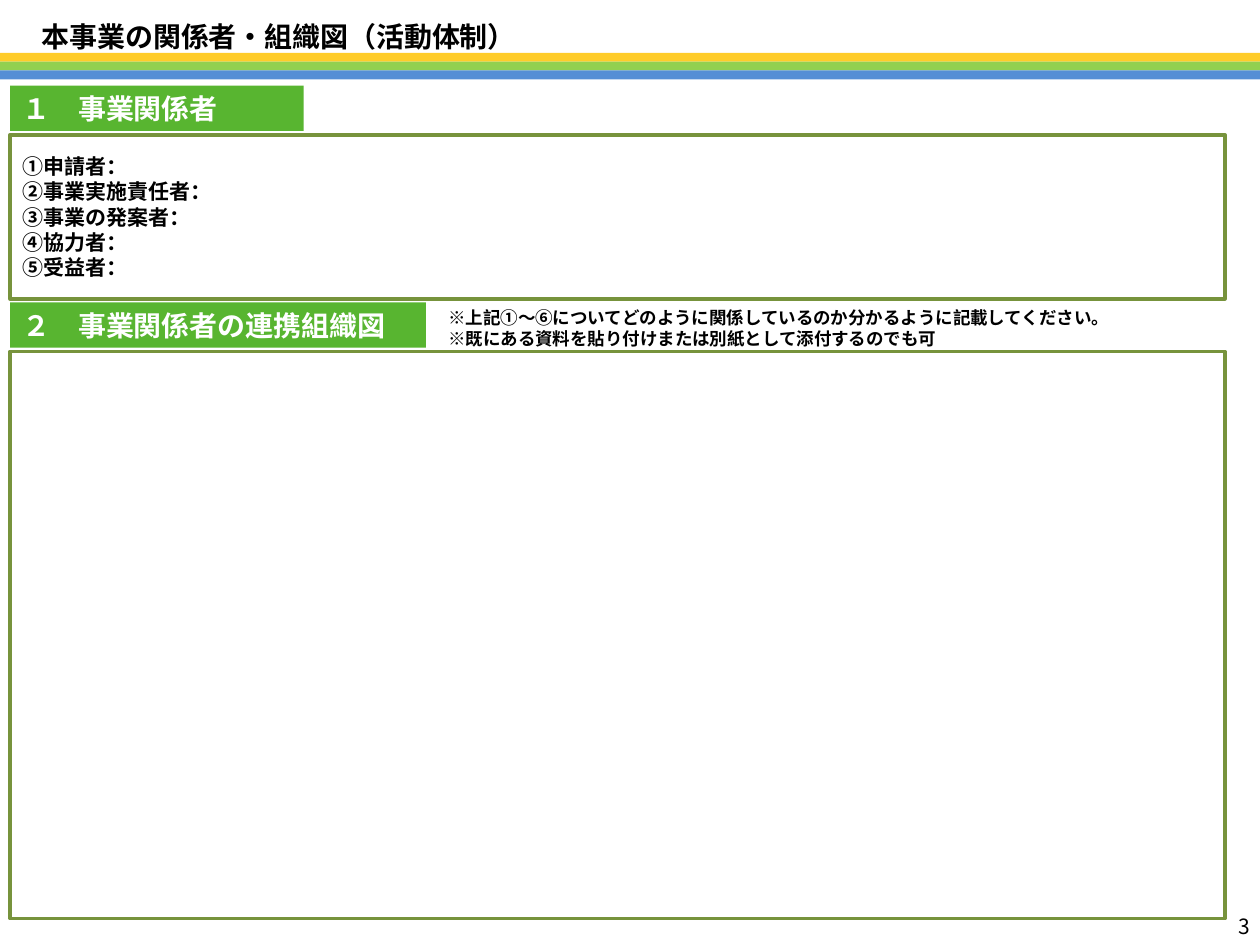
from dataclasses import dataclass

from lxml.etree import SubElement
from pptx import Presentation
from pptx.dml.color import RGBColor
from pptx.enum.shapes import MSO_SHAPE
from pptx.enum.text import MSO_ANCHOR, MSO_AUTO_SIZE, PP_ALIGN
from pptx.oxml.ns import qn
from pptx.util import Inches, Pt

FONT = "Noto Sans CJK JP"
BLACK = RGBColor(0x00, 0x00, 0x00)
WHITE = RGBColor(0xFF, 0xFF, 0xFF)
YELLOW = RGBColor(0xFF, 0xCC, 0x29)
LIME = RGBColor(0x92, 0xD0, 0x50)
BLUE = RGBColor(0x55, 0x8E, 0xD5)
GREEN = RGBColor(0x58, 0xB5, 0x30)
OLIVE = RGBColor(0x77, 0x93, 0x3C)

SLIDE_W, SLIDE_H = 10, 7.5
LEFT, FRAME_W = 0.08, 9.64
HEAD_H, HEAD_STEP = 0.36, 0.39  # heading height, heading top to frame top
STRIPE_TOP, STRIPE_H = 0.42, 0.07


@dataclass(frozen=True)
class Section:
    heading: str
    top: float
    head_w: float
    frame_h: float
    items: tuple[str, ...] = ()


SECTIONS = (
    Section("１　事業関係者", 0.68, 2.33, 1.3,
            ("①申請者：", "②事業実施責任者：", "③事業の発案者：",
             "④協力者：", "⑤受益者：")),
    Section("２　事業関係者の連携組織図", 2.4, 3.3, 4.5),
)
NOTES = ("※上記①～⑥についてどのように関係しているのか分かるように記載してください。",
         "※既にある資料を貼り付けまたは別紙として添付するのでも可")


def place(sp, x: float, y: float, w: float, h: float) -> None:
    sp.left, sp.top, sp.width, sp.height = map(Inches, (x, y, w, h))


def write(sp, lines: tuple[str, ...], size: float, color: RGBColor = BLACK,
          bold: bool = True, anchor=MSO_ANCHOR.MIDDLE) -> None:
    """Fill a shape with left-aligned, unbulleted paragraphs."""
    tf = sp.text_frame
    tf.word_wrap = True
    tf.auto_size = MSO_AUTO_SIZE.NONE
    tf.vertical_anchor = anchor
    for i, line in enumerate(lines):
        p = tf.paragraphs[0] if i == 0 else tf.add_paragraph()
        p.alignment = PP_ALIGN.LEFT
        p.line_spacing = 1.0
        p.space_before = p.space_after = Pt(0)
        pPr = p._p.get_or_add_pPr()
        pPr.set("marL", "0")
        pPr.set("indent", "0")
        SubElement(pPr, qn("a:buNone"))
        r = p.add_run()
        r.text = line
        r.font.name, r.font.size, r.font.bold = FONT, Pt(size), bold
        r.font.color.rgb = color
        SubElement(r._r.get_or_add_rPr(), qn("a:ea")).set("typeface", FONT)


def add_rect(s, x: float, y: float, w: float, h: float,
             fill: RGBColor | None = None):
    sp = s.shapes.add_shape(MSO_SHAPE.RECTANGLE, *map(Inches, (x, y, w, h)))
    sp.shadow.inherit = False
    if fill is None:
        sp.fill.background()
    else:
        sp.fill.solid()
        sp.fill.fore_color.rgb = fill
    sp.line.fill.background()
    return sp


def outline(sp) -> None:
    sp.line.color.rgb = OLIVE
    sp.line.width = Pt(2.25)


def add_section(s, sec: Section, body) -> None:
    """Draw a heading bar and its frame; a list goes in the body placeholder."""
    bar = add_rect(s, LEFT, sec.top, sec.head_w, HEAD_H, GREEN)
    write(bar, (sec.heading,), 16, WHITE)
    box = (LEFT, sec.top + HEAD_STEP, FRAME_W, sec.frame_h)
    if sec.items:
        place(body, *box)
        write(body, sec.items, 12)
        outline(body)
    else:
        outline(add_rect(s, *box))


def add_text(s, x: float, y: float, w: float, h: float,
             lines: tuple[str, ...], size: float, bold: bool) -> None:
    tb = s.shapes.add_textbox(*map(Inches, (x, y, w, h)))
    write(tb, lines, size, bold=bold, anchor=MSO_ANCHOR.TOP)


def main() -> None:
    prs = Presentation()
    prs.slide_width, prs.slide_height = Inches(SLIDE_W), Inches(SLIDE_H)
    s = prs.slides.add_slide(prs.slide_layouts[1])
    title, body = s.placeholders[0], s.placeholders[1]

    # Title over three colour stripes
    for i, color in enumerate((YELLOW, LIME, BLUE)):
        add_rect(s, 0, STRIPE_TOP + i * STRIPE_H, SLIDE_W, STRIPE_H, color)
    place(title, 0.23, 0.06, 9.53, 0.46)
    write(title, ("本事業の関係者・組織図（活動体制）",), 16)

    # Numbered sections
    for sec in SECTIONS:
        add_section(s, sec, body)

    # Notes beside the second heading, and page number
    add_text(s, 3.46, 2.39, 7.18, 0.44, NOTES, 10, True)
    add_text(s, 9.73, 7.2, 0.37, 0.3, ("3",), 12, False)

    prs.save("out.pptx")


if __name__ == "__main__":
    main()
